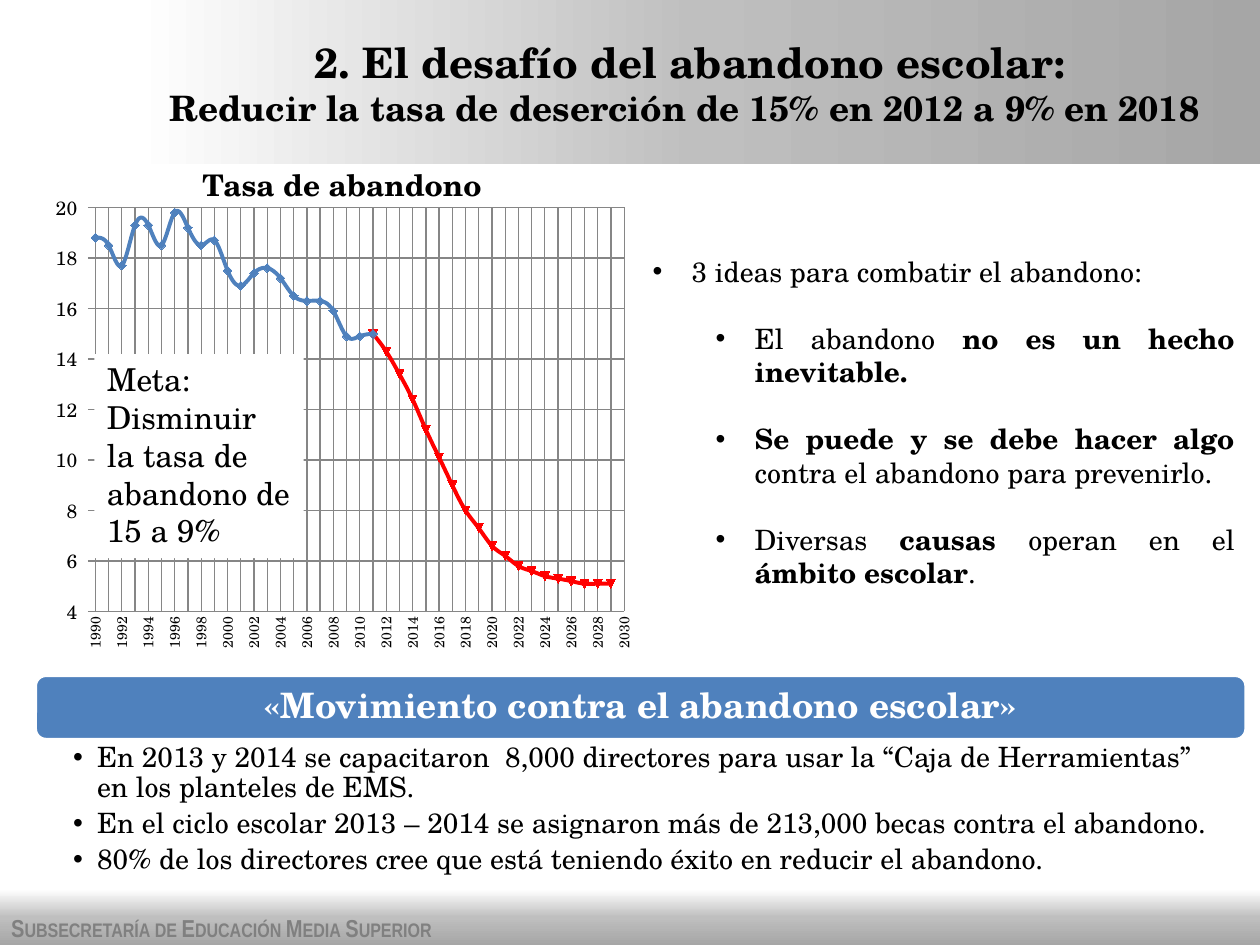
from copy import deepcopy

from lxml import etree
from pptx import Presentation
from pptx.chart.data import XyChartData
from pptx.dml.color import RGBColor
from pptx.enum.chart import XL_CHART_TYPE, XL_MARKER_STYLE, XL_TICK_MARK
from pptx.enum.shapes import MSO_SHAPE
from pptx.enum.text import MSO_ANCHOR, MSO_AUTO_SIZE, PP_ALIGN
from pptx.oxml.ns import qn
from pptx.util import Inches, Pt

SMOOTH = XL_CHART_TYPE.XY_SCATTER_SMOOTH
DIAMOND, AUTO_MARKER = XL_MARKER_STYLE.DIAMOND, XL_MARKER_STYLE.AUTOMATIC
TICK_NONE, TICK_OUT = XL_TICK_MARK.NONE, XL_TICK_MARK.OUTSIDE
RECT, ROUNDED = MSO_SHAPE.RECTANGLE, MSO_SHAPE.ROUNDED_RECTANGLE
TOP, MIDDLE = MSO_ANCHOR.TOP, MSO_ANCHOR.MIDDLE
LEFT, CENTER, JUSTIFY = PP_ALIGN.LEFT, PP_ALIGN.CENTER, PP_ALIGN.JUSTIFY
NO_FIT = MSO_AUTO_SIZE.NONE

COLORS = {"black": "000000", "white": "FFFFFF", "blue": "4F81BD", "red": "FF0000",
          "grid": "868686", "footer": "808080", "silver": "BFBFBF", "gray": "A6A6A6"}
SERIF, NARROW = "TeX Gyre Schola", "Arial Narrow"
INSETS = (0.1, 0.05, 0.1, 0.05)

YEARS = range(1990, 2031)
OBSERVED = [18.8, 18.5, 17.7, 19.3, 19.3, 18.5, 19.8, 19.2, 18.5, 18.7, 17.5,
            16.9, 17.4, 17.6, 17.2, 16.5, 16.3, 16.3, 15.9, 14.9, 14.9, 15]
PROJECTED = [15, 14.3, 13.4, 12.4, 11.2, 10.1, 9, 8, 7.3, 6.6, 6.2, 5.8, 5.6,
             5.4, 5.3, 5.2, 5.1, 5.1, 5.1]
RATES = {"Series 1": dict(enumerate(OBSERVED, 1990)),
         "Series 2": dict(enumerate(PROJECTED, 2011))}
IDEAS = [
    [("El abandono ", False), ("no es un hecho inevitable.", True)],
    [("Se puede y se debe hacer algo ", True),
     ("contra el abandono para prevenirlo.", False)],
    [("Diversas ", False), ("causas ", True), ("operan en el ", False),
     ("ámbito escolar", True), (".", False)],
]
ACTIONS = [
    "En 2013 y 2014 se capacitaron  8,000 directores para usar la “Caja de Herramientas” "
    "en los planteles de EMS.",
    "En el ciclo escolar 2013 – 2014 se asignaron más de 213,000 becas contra el abandono.",
    "80% de los directores cree que está teniendo éxito en reducir el abandono.",
]


def rgb(name):
    """Return the named palette colour."""
    return RGBColor.from_string(COLORS[name])


def write(paragraph, text, size=16, bold=False, color="black", font=SERIF, small_caps=False):
    """Add one formatted run to a paragraph."""
    run = paragraph.add_run()
    run.text = text
    run.font.size, run.font.bold, run.font.name = Pt(size), bold, font
    run.font.color.rgb = rgb(color)
    if small_caps:
        run.font._element.set("cap", "small")


class SlideBuilder:
    """Holds the style and the current slide."""

    def __init__(self, slide):
        """Keep the slide to draw on."""
        self.slide = slide

    def frame(self, holder, anchor=TOP, insets=INSETS):
        """Prepare the text frame of a shape."""
        frame = holder.text_frame
        frame.word_wrap, frame.auto_size, frame.vertical_anchor = True, NO_FIT, anchor
        (frame.margin_left, frame.margin_top,
         frame.margin_right, frame.margin_bottom) = map(Inches, insets)
        return frame

    def paragraph(self, frame, align=LEFT, level=0, before=0, after=0, spacing=1.0, indent=None):
        """Return the next paragraph, bulleted when an indent is given."""
        unused = len(frame.paragraphs) == 1 and not frame.paragraphs[0].runs
        para = frame.paragraphs[0] if unused else frame.add_paragraph()
        para.alignment, para.level, para.line_spacing = align, level, spacing
        para.space_before, para.space_after = Pt(before), Pt(after)
        if indent:
            margin, hanging = indent
            properties = para._p.get_or_add_pPr()
            properties.set("marL", str(Inches(margin)))
            properties.set("indent", str(Inches(-hanging)))
            etree.SubElement(properties, qn("a:buChar")).set("char", "•")
        return para

    def placeholder(self, index, box, fill=None, **frame_format):
        """Move a template placeholder and return its text frame."""
        holder = self.slide.placeholders[index]
        holder.left, holder.top, holder.width, holder.height = map(Inches, box)
        if fill:
            holder.fill.solid()
            holder.fill.fore_color.rgb = rgb(fill)
        return self.frame(holder, **frame_format)

    def shape(self, preset, box, fill="white", line=None):
        """Add a filled preset shape."""
        shape = self.slide.shapes.add_shape(preset, *map(Inches, box))
        shape.shadow.inherit = False
        shape.fill.solid()
        shape.fill.fore_color.rgb = rgb(fill)
        if line:
            shape.line.color.rgb, shape.line.width = rgb(line), Pt(2)
        else:
            shape.line.fill.background()
        return shape

    def gradient_band(self, box, angle):
        """Add a white to gray band behind the placeholders."""
        band = self.shape(RECT, box)
        band.fill.gradient()
        band.fill.gradient_angle = angle
        first = band._element.spPr.find(".//" + qn("a:gs"))
        first.addnext(deepcopy(first))
        for stop, (position, color) in zip(
                band.fill.gradient_stops, [(0, "white"), (0.5, "silver"), (1, "gray")]):
            stop.position, stop.color.rgb = position, rgb(color)
        self.slide.shapes._spTree.insert(2, band._element)

    def label(self, box, text, align=LEFT, anchor=TOP, **text_format):
        """Add a text box with one paragraph."""
        frame = self.frame(self.slide.shapes.add_textbox(*map(Inches, box)), anchor)
        write(self.paragraph(frame, align), text, **text_format)

    def axis(self, axis, low, high, step, size, tick, number_format):
        """Format one chart axis."""
        axis.minimum_scale, axis.maximum_scale, axis.major_unit = low, high, step
        axis.major_tick_mark, axis.minor_tick_mark = tick, TICK_NONE
        axis.has_major_gridlines = True
        for line in (axis.major_gridlines.format.line, axis.format.line):
            line.color.rgb, line.width = rgb("grid"), Pt(0.75)
        labels = axis.tick_labels
        labels.font.size, labels.font.name = Pt(size), SERIF
        labels.number_format, labels.number_format_is_linked = number_format, False

    def dropout_chart(self, box):
        """Add the smooth scatter chart of dropout rates."""
        data = XyChartData()
        for name, rates in RATES.items():
            series = data.add_series(name)
            for year in YEARS:
                series.add_data_point(year, rates.get(year))
        chart = self.slide.shapes.add_chart(SMOOTH, *map(Inches, box), data).chart
        chart.has_title = chart.has_legend = False
        chart.font.name, chart.font.size = SERIF, Pt(16)
        chart.font.color.rgb = rgb("black")
        self.axis(chart.category_axis, YEARS[0], YEARS[-1], 1, 8, TICK_NONE, "General")
        self.axis(chart.value_axis, 4, 20, 2, 11, TICK_OUT, r"0_ ;[Red]\-0\ ")
        body = chart.category_axis._element.find(qn("c:txPr")).find(qn("a:bodyPr"))
        body.set("rot", "-5400000")
        body.set("vert", "horz")
        for series, color, style in zip(
                chart.plots[0].series, ("blue", "red"), (DIAMOND, AUTO_MARKER)):
            for old in series._element.findall(qn("c:smooth")):
                series._element.remove(old)
            etree.SubElement(series._element, qn("c:smooth")).set("val", "1")
            series.format.line.color.rgb, series.format.line.width = rgb(color), Pt(2.25)
            series.marker.style, series.marker.size = style, 5
            series.marker.format.fill.solid()
            series.marker.format.fill.fore_color.rgb = rgb(color)
            series.marker.format.line.color.rgb = rgb(color)
        plot_area = chart._chartSpace.chart.plotArea
        for old in plot_area.findall(qn("c:layout")):
            plot_area.remove(old)
        layout = etree.Element(qn("c:layout"))
        plot_area.insert(0, layout)
        manual = etree.SubElement(layout, qn("c:manualLayout"))
        for tag, value in [("layoutTarget", "inner"), ("xMode", "edge"), ("yMode", "edge"),
                           ("x", "0.1"), ("y", "0.12"), ("w", "0.88"), ("h", "0.79")]:
            etree.SubElement(manual, qn("c:" + tag)).set("val", value)


def main():
    """Build and save the slide."""
    deck = Presentation()
    deck.slide_width, deck.slide_height = Inches(10), Inches(7.5)
    builder = SlideBuilder(deck.slides.add_slide(deck.slide_layouts[3]))
    builder.gradient_band((0, 7.06, 10, 0.44), 270)
    builder.gradient_band((1.06, 0, 8.94, 1.3), 0)
    builder.label((-0.01, 7.2, 6.46, 0.34), "Subsecretaría de Educación Media Superior",
                  size=14, bold=True, color="footer", font=NARROW, small_caps=True)

    title = builder.placeholder(0, (0.75, 0, 9.45, 1.31), anchor=MIDDLE)
    for text, size in [("2. El desafío del abandono escolar:", 24),
                       ("Reducir la tasa de deserción de 15% en 2012 a 9% en 2018 ", 20)]:
        write(builder.paragraph(title, CENTER), text, size=size, bold=True)

    builder.dropout_chart((0.28, 1.16, 4.77, 4.06))
    builder.label((1.3, 1.31, 2.83, 0.31), "Tasa de abandono", CENTER, MIDDLE, size=17, bold=True)
    goal = builder.frame(builder.shape(RECT, (0.75, 2.81, 1.66, 1.62)))
    write(builder.paragraph(goal), "Meta: Disminuir la tasa de abandono de 15 a 9%", size=18)

    ideas = builder.placeholder(1, (5.08, 1.7, 4.82, 3.06), fill="white",
                                insets=(0.1, 0.32, 0.1, 0.05))
    write(builder.paragraph(ideas, JUSTIFY, indent=(0.31, 0.31)),
          "3 ideas para combatir el abandono:")
    for idea in IDEAS:
        item = builder.paragraph(ideas, JUSTIFY, level=1, before=19, indent=(0.81, 0.31))
        for text, bold in idea:
            write(item, text, bold=bold)

    banner = builder.shape(ROUNDED, (0.28, 5.36, 9.61, 0.51), "blue", "white")
    banner_text = builder.frame(banner, MIDDLE)
    write(builder.paragraph(banner_text, CENTER, spacing=0.9),
          "«Movimiento contra el abandono escolar»", size=20, bold=True, color="white")

    actions = builder.placeholder(2, (0.28, 5.87, 9.61, 1.07), insets=(0.3, 0.03, 0.16, 0.03))
    for action in ACTIONS:
        write(builder.paragraph(actions, level=1, after=3.2, spacing=0.9, indent=(0.19, 0.19)),
              action)
    deck.save("out.pptx")


if __name__ == "__main__":
    main()
